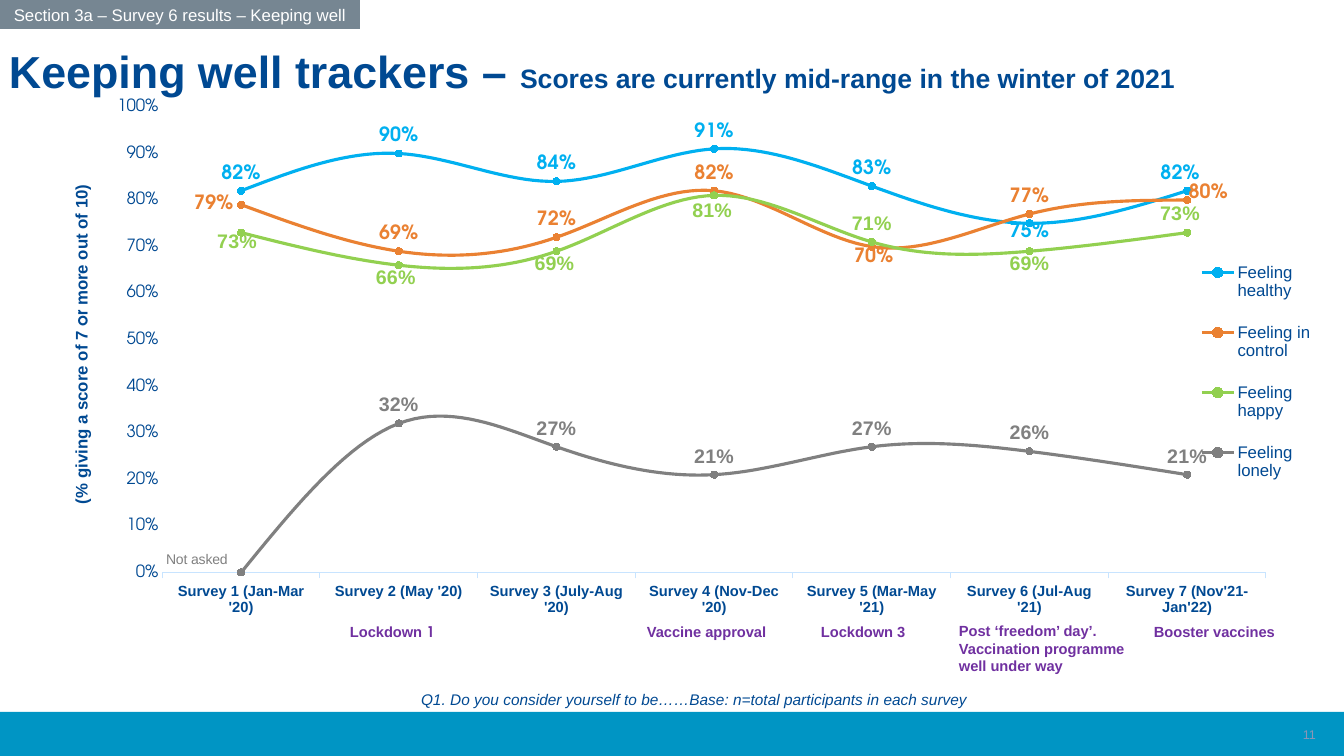
import pptx
import pptx.util
import pptx.chart.data
import pptx.dml.color
import pptx.enum.chart
import pptx.enum.shapes
import pptx.enum.text
import pptx.oxml.xmlchemy

PX = 914400 / 100.8
COLORS = {
    "navy": "004992", "teal": "0095C4", "slate": "768692", "white": "FFFFFF",
    "mist": "8C95B6", "plum": "7030A0", "pale": "C8E4FF", "blue": "00B0F0",
    "orange": "EA8132", "green": "92D050", "gray": "808080",
}
SANS, ROUND = "Arial", "TeX Gyre Adventor"
ALIGN = pptx.enum.text.PP_ALIGN
ANCHOR = pptx.enum.text.MSO_ANCHOR
SPOT = pptx.enum.chart.XL_LABEL_POSITION
TICK = pptx.enum.chart.XL_TICK_MARK


def emu(px):
    return pptx.util.Emu(round(px * PX))


def rgb(name):
    return pptx.dml.color.RGBColor.from_string(COLORS[name])


def place(host, index, **values):
    """Give a chart part a manual layout, as shares of the chart."""
    tag = pptx.oxml.xmlchemy.OxmlElement
    for old in host.xpath("c:layout"):
        host.remove(old)
    layout, manual = tag("c:layout"), tag("c:manualLayout")
    layout.append(manual)
    for key, value in values.items():
        item = tag("c:" + key)
        item.set("val", str(value))
        manual.append(item)
    host.insert(index, layout)


class Page:
    def __init__(self, deck):
        self.slide = deck.slides.add_slide(deck.slide_layouts[6])
        self.shapes = self.slide.shapes

    def style(self, font, size, color, bold=False, face=SANS, italic=False):
        font.size, font.name = pptx.util.Pt(size), face
        font.bold, font.italic = bold, italic
        font.color.rgb = rgb(color)

    def fill(self, frame, runs, look, align=ALIGN.LEFT):
        """Runs are (text, changed font traits) pairs."""
        par = frame.paragraphs[0]
        par.alignment = align
        for text, change in runs:
            run = par.add_run()
            run.text = text
            if len(runs) > 1:
                self.style(run.font, **{**look, **change})
        if len(runs) == 1:
            self.style(par.font, **look)
        return par

    def rect(self, box, color):
        bar = self.shapes.add_shape(
            pptx.enum.shapes.MSO_SHAPE.RECTANGLE, *map(emu, box))
        bar.shadow.inherit = False
        bar.fill.solid()
        bar.fill.fore_color.rgb = rgb(color)
        bar.line.fill.background()
        return bar

    def text(self, box, runs, look, align=ALIGN.LEFT, wrap=True,
             anchor=ANCHOR.TOP, turn=0, side=10):
        item = self.shapes.add_textbox(*map(emu, box))
        item.rotation = turn
        frame = item.text_frame
        frame.word_wrap, frame.vertical_anchor = wrap, anchor
        frame.margin_left = frame.margin_right = emu(side)
        return self.fill(frame, runs, look, align)

    def chart(self, box, cats, series):
        data = pptx.chart.data.CategoryChartData(number_format="0%")
        data.categories = cats
        for name, _, _, values, _ in series:
            data.add_series(name, values)
        chart = self.shapes.add_chart(
            pptx.enum.chart.XL_CHART_TYPE.LINE_MARKERS,
            *map(emu, box), data).chart
        self.style(chart.font, 10, "navy")
        chart.has_title = False
        return chart

    def line(self, ser, color, face, shifts, box):
        """Shifts map a point to its label's side and px offset."""
        ser.smooth = True
        ser.format.line.color.rgb = rgb(color)
        ser.format.line.width = pptx.util.Pt(2.25)
        mark = ser.marker
        mark.style, mark.size = pptx.enum.chart.XL_MARKER_STYLE.CIRCLE, 5
        mark.format.fill.solid()
        mark.format.fill.fore_color.rgb = rgb(color)
        mark.format.line.color.rgb = rgb(color)
        tags = ser.data_labels
        tags.show_value, tags.position = True, SPOT.ABOVE
        tags.number_format, tags.number_format_is_linked = "0%", False
        self.style(tags.font, 14, color, True, face)
        for at, (spot, dx, dy, *note) in shifts.items():
            tag = ser.points[at].data_label
            if note:
                self.fill(tag.text_frame, [(note[0], {})],
                          dict(size=10, color=color), ALIGN.CENTER)
            else:
                self.style(tag.font, 14, color, True, face)
            tag.position = spot
            node = ser._element.xpath(f'c:dLbls/c:dLbl[c:idx/@val="{at}"]')[0]
            if dx or dy:
                place(node, 1, x=round(dx / box[2], 4),
                      y=round(dy / box[3], 4))


CATS = ["Survey 1 (Jan-Mar '20)", "Survey 2 (May '20)",
        "Survey 3 (July-Aug '20)", "Survey 4 (Nov-Dec '20)",
        "Survey 5 (Mar-May '21)", "Survey 6 (Jul-Aug '21)",
        "Survey 7 (Nov'21-Jan'22)"]
LOW, TOP = SPOT.BELOW, SPOT.ABOVE
SERIES = [
    ("Feeling healthy", "blue", ROUND,
     [.82, .9, .84, .91, .83, .75, .82],
     {5: (LOW, 0, -8), 6: (TOP, -7, 0)}),
    ("Feeling in control", "orange", ROUND,
     [.79, .69, .72, .82, .7, .77, .8],
     {0: (SPOT.LEFT, 0, 0), 4: (LOW, 2, -6), 6: (SPOT.RIGHT, -6, -7)}),
    ("Feeling happy", "green", SANS,
     [.73, .66, .69, .81, .71, .69, .73],
     {0: (LOW, -4, -9), 1: (LOW, -3, -6), 2: (LOW, -2, -6),
      3: (LOW, -2, -3), 5: (LOW, 0, -6), 6: (TOP, -7, 0)}),
    ("Feeling lonely", "gray", SANS,
     [None, .32, .27, .21, .27, .26, .21],
     {0: (SPOT.LEFT, -6, -13, "Not asked")}),
]
EVENTS = [
    ((340, 618, 106, 28), [("Lockdown", {}), (" 1", {"face": ROUND})], False),
    ((811, 618, 106, 28), [("Lockdown 3", {})], False),
    ((637, 618, 142, 28), [("Vaccine approval", {})], False),
    ((949, 617, 211, 64),
     [("Post ‘freedom’ day’. Vaccination programme well under way", {})], True),
    ((1144, 618, 143, 28), [("Booster vaccines", {})], False),
]


def main():
    deck = pptx.Presentation()
    deck.slide_width, deck.slide_height = emu(1344), emu(756)
    page = Page(deck)

    # Footer band and page number
    page.rect((0, 712, 1344, 44), "teal")
    page.text((1024, 714, 302, 40), [("11", {})], dict(size=9, color="mist"),
              ALIGN.RIGHT, anchor=ANCHOR.MIDDLE)

    # Heading
    head = page.text(
        (-15, 45, 1332, 60),
        [("Keeping well trackers – ", {}),
         ("Scores are currently mid-range in the winter of 2021",
          {"size": 19})],
        dict(size=32, color="navy", bold=True), side=24)
    head.line_spacing = 0.9

    # Tracker chart
    box = (82, 95, 1236, 630)
    chart = page.chart(box, CATS, SERIES)
    for ser, (_, color, face, _, shifts) in zip(chart.series, SERIES):
        page.line(ser, color, face, shifts, box)
    space = chart._chartSpace
    space.xpath("c:chart/c:dispBlanksAs")[0].set("val", "zero")
    place(space.xpath("c:chart/c:plotArea")[0], 0, layoutTarget="inner",
          xMode="edge", yMode="edge", x=.065, y=.019, w=.893, h=.739)

    # Axes
    cat, val = chart.category_axis, chart.value_axis
    page.style(cat.tick_labels.font, 10.5, "navy", True)
    cat.major_tick_mark = TICK.OUTSIDE
    cat.format.line.color.rgb = rgb("pale")
    cat.format.line.width = pptx.util.Pt(0.75)
    page.style(val.tick_labels.font, 12, "navy", face=ROUND)
    val.tick_labels.number_format = "0%"
    val.tick_labels.number_format_is_linked = False
    val.minimum_scale, val.maximum_scale, val.major_unit = 0, 1, 0.1
    val.has_major_gridlines = False
    val.major_tick_mark = TICK.NONE
    val.format.line.fill.background()

    # Legend
    chart.has_legend = True
    key = chart.legend
    key.position = pptx.enum.chart.XL_LEGEND_POSITION.RIGHT
    key.include_in_layout = False
    page.style(key.font, 12, "navy")
    place(key._element, 1, xMode="edge", yMode="edge",
          x=.9, y=.23, w=.1, h=.42)

    # Axis title and source note
    page.text((-114, 304, 390, 30),
              [("(% giving a score of 7 ", {}), ("or", {"face": ROUND}),
               (" more out of 10)", {})],
              dict(size=12, color="navy", bold=True), turn=270)
    page.text((411, 685, 583, 29),
              [("Q1. Do you consider yourself to be……Base: n=total "
                "participants in each survey", {})],
              dict(size=11, color="navy", italic=True))

    # Section tab
    tab = page.rect((0, 0, 360, 29), "slate").text_frame
    tab.vertical_anchor = ANCHOR.MIDDLE
    page.fill(tab, [("Section 3a – Survey 6 results – Keeping well", {})],
              dict(size=12, color="white"), ALIGN.CENTER)

    # Events under the surveys
    for spot, runs, wrap in EVENTS:
        page.text(spot, runs, dict(size=10.5, color="plum", bold=True),
                  wrap=wrap)

    deck.save("out.pptx")


if __name__ == "__main__":
    main()
